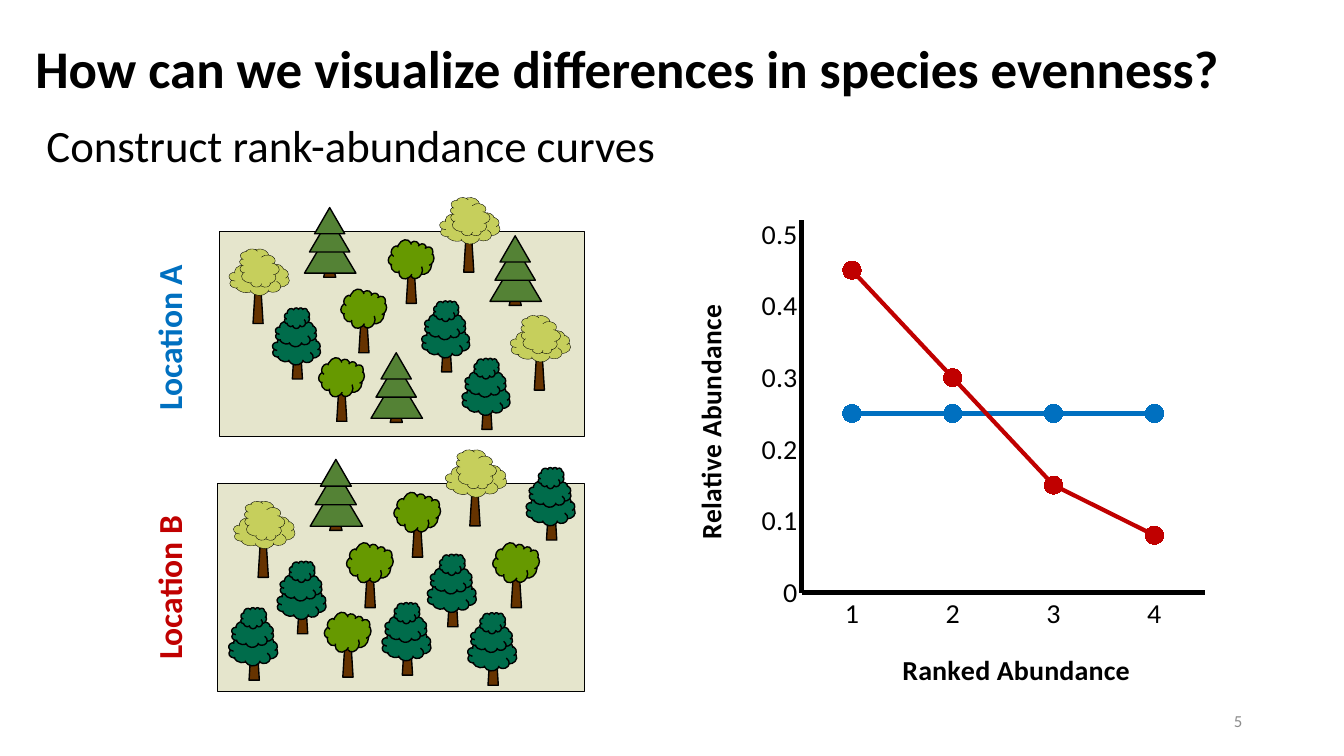
from pptx import Presentation
from pptx.chart import data
from pptx.dml import color
from pptx.enum import chart as charts, shapes, text
from pptx.oxml import parse_xml
from pptx.oxml import ns
from pptx.util import Inches, Pt

# Content
TITLE = "How can we visualize differences in species evenness?"
SUBTITLE = "Construct rank-abundance curves"
PAGE_NUMBER = "5"
FONT = "Calibri"
COLORS = {
    "black": "000000", "gray": "8C8C8C", "blue": "0070C0", "red": "C00000",
    "field": "808000", "trunk": "663300", "round": "669900",
    "tiered": "006C4B", "conifer": "548235", "pale": "C6CF5C",
}
RANKS = ["1", "2", "3", "4"]

# Each location: label box, field box, tree scale, trunk corners by species
LOCATIONS = [
    {"name": "Location A", "color": "blue", "abundance": (0.25, 0.25, 0.25, 0.25),
     "label": (0.66, 3.1, 2.03, 0.5), "field": (2.18, 2.3, 3.62, 2.03), "scale": 1,
     "trees": {
         "round": [(3.56, 3.1), (3.34, 3.78), (4.03, 2.61)],
         "tiered": [(4.78, 3.86), (4.38, 3.29), (2.9, 3.36)],
         "conifer": [(3.87, 4.08), (5.05, 2.92), (3.21, 2.64)],
         "pale": [(5.3, 3.47), (4.6, 2.3), (2.51, 2.81)]}},
    {"name": "Location B", "color": "red", "abundance": (0.45, 0.3, 0.15, 0.08),
     "label": (0.67, 5.58, 2.01, 0.5), "field": (2.16, 4.8, 3.64, 2.06), "scale": 1.02,
     "trees": {
         "round": [(3.62, 5.62), (3.4, 6.31), (4.09, 5.12), (5.07, 5.62)],
         "tiered": [(4.84, 6.39), (4.44, 5.81), (2.95, 5.88),
                    (5.42, 4.95), (3.99, 6.29), (2.47, 6.34)],
         "conifer": [(3.27, 5.15)],
         "pale": [(4.66, 4.81), (2.56, 5.32)]}},
]

# Each species: trunk size, crown shape, line width, crown parts
# (offset from the trunk corner, size, rotation)
KINDS = shapes.MSO_SHAPE
SPECIES = {
    "round": ((0.1, 0.4), KINDS.CLOUD, 1, [(-0.17, -0.23, 0.43, 0.4, 26.3)]),
    "tiered": ((0.1, 0.4), KINDS.CLOUD, 1, [
        (-0.2, -0.04, 0.48, 0.3, 7.4), (-0.17, -0.18, 0.41, 0.26, 7.4),
        (-0.08, -0.31, 0.25, 0.21, 7.4)]),
    "conifer": ((0.12, 0.11), KINDS.ISOSCELES_TRIANGLE, 1, [
        (-0.19, -0.36, 0.51, 0.43, 0), (-0.14, -0.48, 0.4, 0.34, 0),
        (-0.09, -0.58, 0.3, 0.26, 0)]),
    "pale": ((0.1, 0.4), KINDS.CLOUD, 0.25, [
        (-0.24, -0.2, 0.6, 0.32, 3.7), (-0.13, -0.35, 0.38, 0.4, 276.4)]),
}

# Chart frame, inner plot area and axis title corners, in slide inches
CHART = (6.6, 1.9, 5.6, 5.0)
PLOT = (7.95, 2.19, 4.0, 3.77)
RANK_TITLE = (8.9, 6.49)
ABUNDANCE_TITLE = (6.8, 3.04)


def rgb(name):
    return color.RGBColor.from_string(COLORS[name])


def style_font(font, size, name="black", bold=False):
    font.name, font.size, font.bold = FONT, Pt(size), bold
    font.color.rgb = rgb(name)


def place(shape, box):
    shape.left, shape.top, shape.width, shape.height = map(Inches, box)


def write(shape, words, size, name="black", bold=False, align=text.PP_ALIGN.LEFT):
    frame = shape.text_frame
    frame.text = words
    frame.word_wrap = True
    frame.auto_size = text.MSO_AUTO_SIZE.NONE
    para = frame.paragraphs[0]
    para.alignment = align
    style_font(para.runs[0].font, size, name, bold)
    return para


def draw(group, kind, box, fill, line_width=1, rotation=0):
    shape = group.shapes.add_shape(kind, *map(Inches, box))
    shape.shadow.inherit = False
    shape.rotation = rotation
    shape.fill.solid()
    shape.fill.fore_color.rgb = rgb(fill)
    shape.line.color.rgb = rgb("black")
    shape.line.width = Pt(line_width)
    return shape


def draw_tree(group, species, corner, scale):
    trunk, crown, line_width, parts = SPECIES[species]
    x, y = corner
    draw(group, KINDS.TRAPEZOID, (x, y, trunk[0] * scale, trunk[1] * scale), "trunk")
    for dx, dy, width, height, rotation in parts:
        box = (x + dx * scale, y + dy * scale, width * scale, height * scale)
        draw(group, crown, box, species, line_width, rotation)


def set_layout(element, position, box):
    """Fix a chart part at slide coordinates; a box of four also sets its size."""
    for old in element.findall(ns.qn("c:layout")):
        element.remove(old)
    values = [(box[0] - CHART[0]) / CHART[2], (box[1] - CHART[1]) / CHART[3]]
    tags = '<c:xMode val="edge"/><c:yMode val="edge"/>'
    if len(box) == 4:
        values += [box[2] / CHART[2], box[3] / CHART[3]]
        tags = '<c:layoutTarget val="inner"/>' + tags
    tags += "".join(f'<c:{key} val="{value:.4f}"/>' for key, value in zip("xywh", values))
    element.insert(position, parse_xml(
        f'<c:layout {ns.nsdecls("c")}><c:manualLayout>{tags}</c:manualLayout></c:layout>'))


def style_axis(axis, title, corner, rotation):
    axis.has_major_gridlines = False
    axis.major_tick_mark = axis.minor_tick_mark = charts.XL_TICK_MARK.NONE
    axis.format.line.color.rgb = rgb("black")
    axis.format.line.width = Pt(3)
    style_font(axis.tick_labels.font, 20)
    frame = axis.axis_title.text_frame
    frame.text = title
    style_font(frame.paragraphs[0].runs[0].font, 20, bold=True)
    body = frame._txBody.find(ns.qn("a:bodyPr"))
    body.set("rot", str(rotation * 60000))
    body.set("vert", "horz")
    set_layout(axis.axis_title.element, 1, corner)


def add_rank_chart(page):
    table = data.CategoryChartData(number_format="General")
    table.categories = RANKS
    for location in LOCATIONS:
        table.add_series(location["name"], location["abundance"])
    chart = page.shapes.add_chart(
        charts.XL_CHART_TYPE.LINE_MARKERS, *map(Inches, CHART), table).chart
    chart.has_legend = chart.has_title = False
    style_font(chart.font, 20)
    plot = chart.plots[0]
    plot.vary_by_categories = False
    for series, location in zip(plot.series, LOCATIONS):
        series.smooth = False
        series.format.line.color.rgb = rgb(location["color"])
        series.format.line.width = Pt(3)
        marker = series.marker
        marker.style, marker.size = charts.XL_MARKER_STYLE.CIRCLE, 13
        marker.format.fill.solid()
        marker.format.fill.fore_color.rgb = rgb(location["color"])
        marker.format.line.color.rgb = rgb(location["color"])
    scale = chart.value_axis
    scale.minimum_scale, scale.maximum_scale, scale.major_unit = 0, 0.52, 0.1
    scale.tick_labels.number_format = "General"
    scale.tick_labels.number_format_is_linked = False
    style_axis(scale, "Relative Abundance", ABUNDANCE_TITLE, -90)
    style_axis(chart.category_axis, "Ranked Abundance", RANK_TITLE, 0)
    set_layout(chart.element.xpath(".//c:plotArea")[0], 0, PLOT)


def main():
    deck = Presentation()
    deck.slide_width, deck.slide_height = Inches(13.33), Inches(7.5)
    page = deck.slides.add_slide(deck.slide_layouts[1])

    # Title, subtitle and page number
    title, body = page.placeholders
    place(title, (0.25, 0.37, 13.19, 0.99))
    title.text_frame.vertical_anchor = text.MSO_ANCHOR.TOP
    write(title, TITLE, 37.8, bold=True).line_spacing = 0.9
    place(body, (0.25, 1.12, 11.71, 0.64))
    para = write(body, SUBTITLE, 32)
    para.space_before, para.space_after = Pt(0), Pt(12)
    settings = para._p.get_or_add_pPr()
    settings.set("marL", str(Inches(0.11)))
    settings.set("indent", "0")
    settings.append(parse_xml(f'<a:buNone {ns.nsdecls("a")}/>'))
    number = page.shapes.add_textbox(*map(Inches, (9.42, 6.95, 3, 0.4)))
    number.text_frame.vertical_anchor = text.MSO_ANCHOR.MIDDLE
    write(number, PAGE_NUMBER, 12, "gray", align=text.PP_ALIGN.RIGHT)

    # Locations with their trees
    for location in LOCATIONS:
        label = page.shapes.add_textbox(*map(Inches, location["label"]))
        label.rotation = 270
        write(label, location["name"], 24, location["color"], True, text.PP_ALIGN.CENTER)
        group = page.shapes.add_group_shape()
        field = draw(group, KINDS.RECTANGLE, location["field"], "field")
        tint = field.fill._xPr.find(ns.qn("a:solidFill"))[0]
        tint.append(parse_xml(f'<a:alpha {ns.nsdecls("a")} val="20000"/>'))
        for species, corners in location["trees"].items():
            for corner in corners:
                draw_tree(group, species, corner, location["scale"])

    # Rank-abundance curves
    add_rank_chart(page)
    deck.save("out.pptx")


if __name__ == "__main__":
    main()
